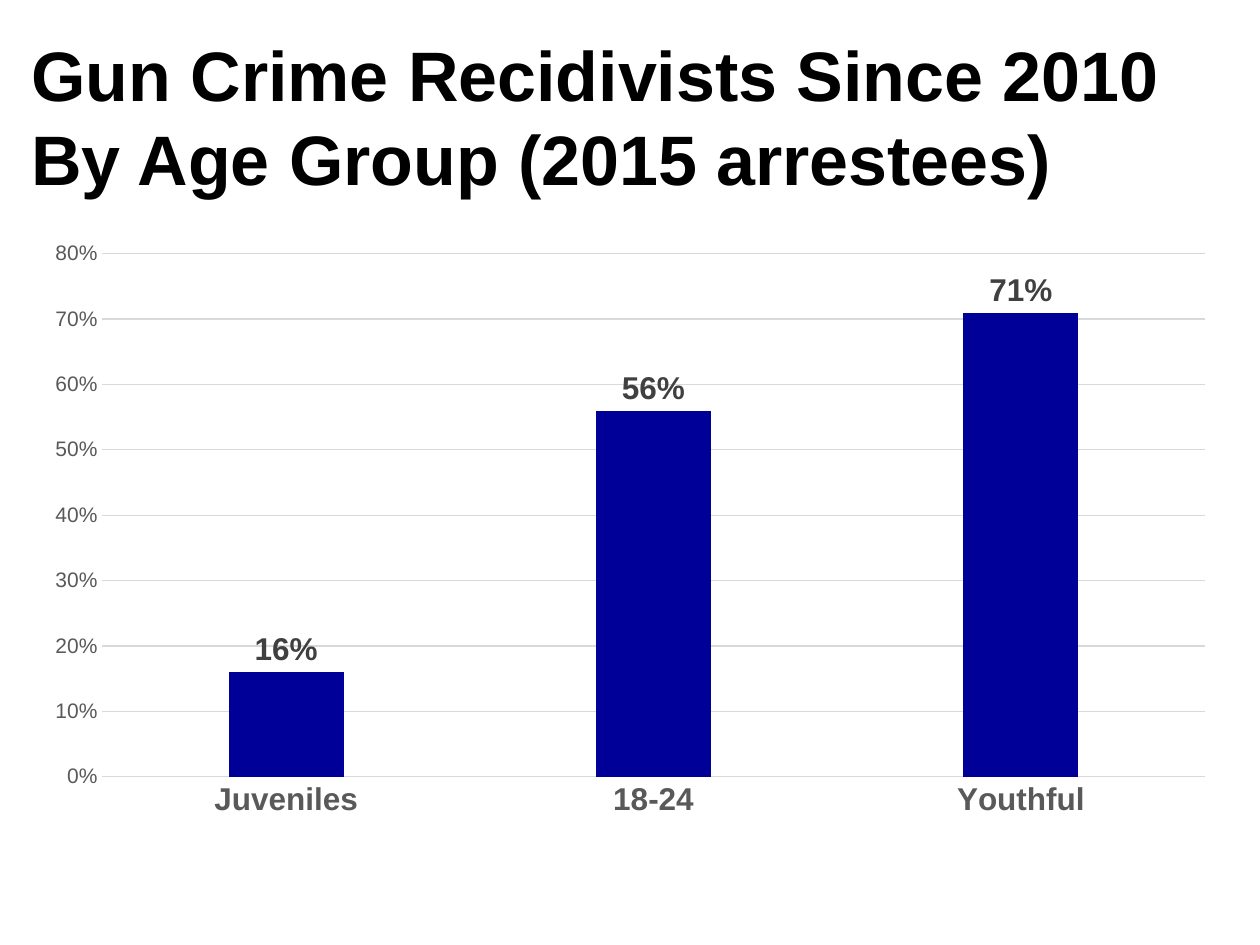
"""Build a slide comparing gun crime recidivism across age groups."""
from dataclasses import dataclass

from pptx import Presentation
from pptx.chart.data import CategoryChartData
from pptx.dml.color import RGBColor
from pptx.enum.chart import XL_CHART_TYPE, XL_LABEL_POSITION, XL_TICK_MARK
from pptx.enum.text import MSO_ANCHOR, PP_ALIGN
from pptx.util import Inches, Pt

COLUMNS = XL_CHART_TYPE.COLUMN_CLUSTERED
ABOVE_BAR = XL_LABEL_POSITION.OUTSIDE_END
NO_TICK = XL_TICK_MARK.NONE
BOTTOM = MSO_ANCHOR.BOTTOM
LEFT = PP_ALIGN.LEFT


@dataclass(frozen=True)
class Theme:
    font: str = "Arial"
    ink: str = "000000"
    bar: str = "000099"
    axis_text: str = "595959"
    label_text: str = "404040"
    rule: str = "D9D9D9"
    title_size: int = 40
    title_leading: int = 48
    category_size: int = 18
    scale_size: int = 12
    chart_size: int = 10
    rule_width: float = 0.75


THEME = Theme()
RECIDIVISM = {"Juveniles": 0.16, "18-24": 0.56, "Youthful": 0.71}


def apply_format(target, values):
    for name, value in values.items():
        setattr(target, name, value)


def style_font(font, size, color, bold=False):
    apply_format(font, {"name": THEME.font, "size": Pt(size), "bold": bold})
    font.color.rgb = RGBColor.from_string(color)


def style_rule(line):
    line.color.rgb = RGBColor.from_string(THEME.rule)
    line.width = Pt(THEME.rule_width)


def add_title(slide, wording):
    title = slide.shapes.add_textbox(
        Inches(0.25), Inches(0.33), Inches(9.5), Inches(1.25)
    ).text_frame
    apply_format(title, {
        "word_wrap": True, "vertical_anchor": BOTTOM,
        "margin_left": 0, "margin_right": 0, "margin_top": 0, "margin_bottom": 0,
    })
    heading = title.paragraphs[0]
    apply_format(heading, {"alignment": LEFT, "line_spacing": Pt(THEME.title_leading)})
    run = heading.add_run()
    run.text = wording
    style_font(run.font, THEME.title_size, THEME.ink, True)


def style_axes(chart):
    ages, shares = chart.category_axis, chart.value_axis
    for axis in (ages, shares):
        apply_format(axis, {"major_tick_mark": NO_TICK, "minor_tick_mark": NO_TICK})
    style_font(ages.tick_labels.font, THEME.category_size, THEME.axis_text, True)
    style_rule(ages.format.line)
    apply_format(shares, {
        "minimum_scale": 0, "maximum_scale": 0.8, "major_unit": 0.1,
        "has_major_gridlines": True,
    })
    style_rule(shares.major_gridlines.format.line)
    shares.format.line.fill.background()
    apply_format(shares.tick_labels, {"number_format": "0%", "number_format_is_linked": False})
    style_font(shares.tick_labels.font, THEME.scale_size, THEME.axis_text)


def style_bars(plot):
    apply_format(plot, {"gap_width": 219, "overlap": -27, "vary_by_categories": False})
    bars = plot.series[0]
    bars.format.fill.solid()
    bars.format.fill.fore_color.rgb = RGBColor.from_string(THEME.bar)
    labels = bars.data_labels
    apply_format(labels, {
        "show_value": True, "position": ABOVE_BAR,
        "number_format": "0%", "number_format_is_linked": False,
    })
    style_font(labels.font, THEME.category_size, THEME.label_text, True)


def add_recidivism_chart(slide):
    recidivism = CategoryChartData(number_format="0%")
    recidivism.categories = list(RECIDIVISM)
    recidivism.add_series("Series 1", list(RECIDIVISM.values()))
    chart = slide.shapes.add_chart(
        COLUMNS, Inches(0.25), Inches(1.83), Inches(9.5), Inches(4.75), recidivism
    ).chart
    apply_format(chart, {"has_title": False, "has_legend": False})
    style_font(chart.font, THEME.chart_size, THEME.ink)
    style_axes(chart)
    style_bars(chart.plots[0])


def main():
    deck = Presentation()
    apply_format(deck, {"slide_width": Inches(10), "slide_height": Inches(7.5)})
    slide = deck.slides.add_slide(deck.slide_layouts[6])
    add_title(slide, "Gun Crime Recidivists Since 2010 By Age Group (2015 arrestees)")
    add_recidivism_chart(slide)
    deck.save("out.pptx")


if __name__ == "__main__":
    main()
